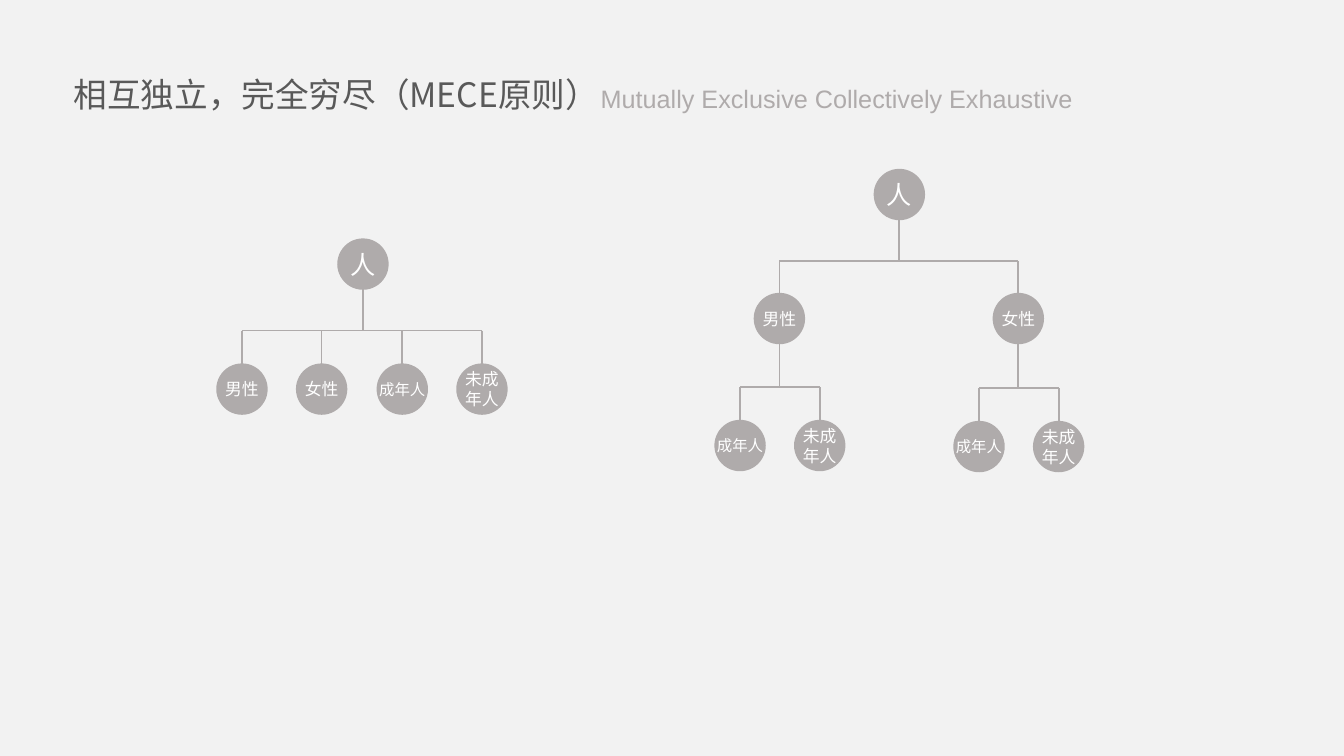
from pptx import Presentation
from pptx.dml.color import RGBColor
from pptx.enum.shapes import MSO_CONNECTOR, MSO_SHAPE
from pptx.enum.text import MSO_ANCHOR, PP_ALIGN
from pptx.oxml.ns import qn
from pptx.util import Inches, Pt
from lxml.etree import SubElement

COLORS = {"background": "F2F2F2", "title": "595959", "gray": "AFABAB", "white": "FFFFFF"}
CHINESE_FONT = "Noto Sans CJK SC"
DIAMETER = 0.51

TREES = [
    {"parent": (3.6, 2.62), "bar": 3.28, "child_y": 3.86,
     "children": [(2.4, "男性"), (3.19, "女性"), (3.99, "成年人"), (4.78, "未成\n年人")]},
    {"parent": (8.92, 1.93), "bar": 2.59, "child_y": 3.16,
     "children": [(7.73, "男性"), (10.1, "女性")]},
    {"parent": (7.73, 3.16), "bar": 3.84, "child_y": 4.42,
     "children": [(7.34, "成年人"), (8.13, "未成\n年人")]},
    {"parent": (10.1, 3.15), "bar": 3.85, "child_y": 4.43,
     "children": [(9.71, "成年人"), (10.5, "未成\n年人")]},
]
ROOTS = TREES[:2]
LABEL_SIZES = {"人": 18, "成年人": 11}

presentation = Presentation()
presentation.slide_width = Inches(13.33)
presentation.slide_height = Inches(7.5)
slide = presentation.slides.add_slide(presentation.slide_layouts[5])
slide.background.fill.solid()
slide.background.fill.fore_color.rgb = RGBColor.from_string(COLORS["background"])


def write_text(shape, text, size, color, font_name, alignment, frame_format):
    frame = shape.text_frame
    for name, value in frame_format.items():
        setattr(frame, name, value)
    frame.text = text
    for paragraph in frame.paragraphs:
        paragraph.alignment = alignment
        if font_name == CHINESE_FONT:
            paragraph.line_spacing = Pt(size * 1.2)
        font = paragraph.runs[0].font
        for name, value in {"name": font_name, "size": Pt(size), "bold": False}.items():
            setattr(font, name, value)
        font.color.rgb = RGBColor.from_string(COLORS[color])
        east_asian = SubElement(paragraph.runs[0]._r.get_or_add_rPr(), qn("a:ea"))
        east_asian.set("typeface", font_name)


def add_line(start_x, start_y, end_x, end_y):
    line = slide.shapes.add_connector(
        MSO_CONNECTOR.STRAIGHT, Inches(start_x), Inches(start_y), Inches(end_x), Inches(end_y))
    line.line.color.rgb = RGBColor.from_string(COLORS["gray"])
    line.line.width = Pt(1.25)
    SubElement(line._element.spPr, qn("a:effectLst"))


title = slide.shapes.title
title_place = {"left": 0.63, "top": 0.68, "width": 5.54, "height": 0.5}
for name, value in title_place.items():
    setattr(title, name, Inches(value))
write_text(title, "相互独立，完全穷尽（MECE原则）", 24, "title", CHINESE_FONT, PP_ALIGN.LEFT,
           {"word_wrap": True, "vertical_anchor": MSO_ANCHOR.TOP})

subtitle = slide.shapes.add_textbox(Inches(5.86), Inches(0.78), Inches(4.93), Inches(0.4))
write_text(subtitle, "Mutually Exclusive Collectively Exhaustive", 18, "gray", "Arial",
           PP_ALIGN.LEFT, {"word_wrap": False})

nodes = [(*tree["parent"], "人") for tree in ROOTS]
for tree in TREES:
    parent_x, parent_y = tree["parent"]
    bar, child_y, children = tree["bar"], tree["child_y"], tree["children"]
    add_line(children[0][0], bar, children[-1][0], bar)
    add_line(parent_x, parent_y + 0.2, parent_x, bar)
    for child_x, label in children:
        add_line(child_x, bar, child_x, child_y - 0.1)
        nodes.append((child_x, child_y, label))

for center_x, center_y, label in nodes:
    circle = slide.shapes.add_shape(
        MSO_SHAPE.OVAL, Inches(center_x - DIAMETER / 2), Inches(center_y - DIAMETER / 2),
        Inches(DIAMETER), Inches(DIAMETER))
    circle.shadow.inherit = False
    circle.fill.solid()
    circle.fill.fore_color.rgb = RGBColor.from_string(COLORS["gray"])
    circle.line.fill.background()
    write_text(circle, label, LABEL_SIZES.get(label, 12), "white", CHINESE_FONT, PP_ALIGN.CENTER,
               {"word_wrap": False, "vertical_anchor": MSO_ANCHOR.MIDDLE, "margin_left": 0,
                "margin_right": 0, "margin_top": 0, "margin_bottom": 0})

presentation.save("out.pptx")
